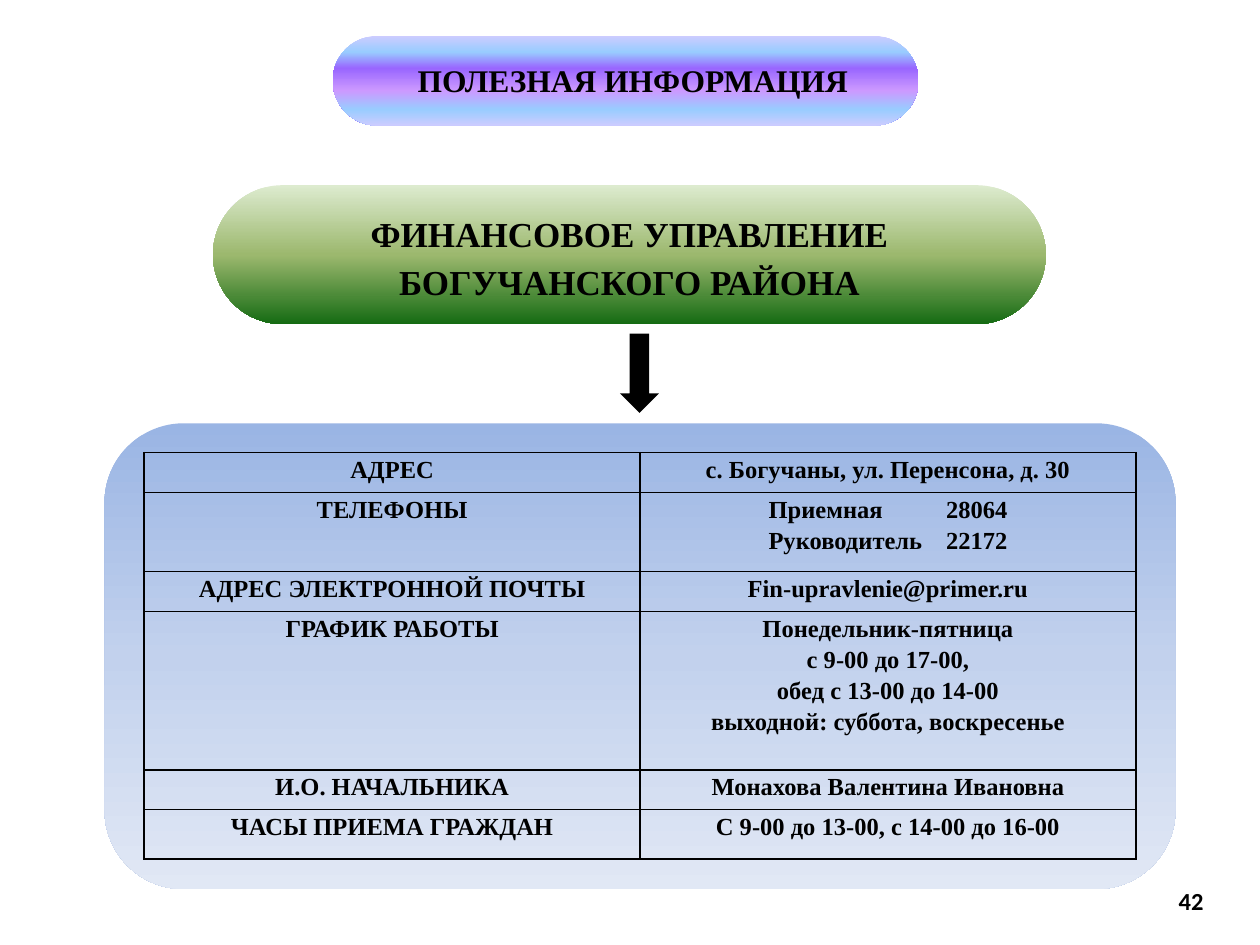
from dataclasses import dataclass

from lxml.etree import SubElement
from pptx import Presentation
from pptx.dml.color import RGBColor
from pptx.enum.shapes import MSO_SHAPE
from pptx.enum.text import MSO_ANCHOR, PP_ALIGN
from pptx.oxml import parse_xml
from pptx.oxml.ns import nsdecls, qn
from pptx.util import Inches, Pt

WIDTH, HEIGHT = 10, 7.5
BLACK = RGBColor(0x00, 0x00, 0x00)
LAVENDER = RGBColor(0xCC, 0xCC, 0xFF)
SKY = RGBColor(0x99, 0xCC, 0xFF)
VIOLET = RGBColor(0x99, 0x66, 0xFF)
LILAC = RGBColor(0xCC, 0x99, 0xFF)
PALE_GREEN = RGBColor(0xDD, 0xEB, 0xCF)
OLIVE = RGBColor(0x9C, 0xB8, 0x6E)
FOREST = RGBColor(0x15, 0x6B, 0x13)
BLUE = RGBColor(0x9A, 0xB5, 0xE4)
LIGHT_BLUE = RGBColor(0xC2, 0xD1, 0xED)
PALE_BLUE = RGBColor(0xE1, 0xE8, 0xF5)

HEADING_BANDS = [(0, LAVENDER), (18, SKY), (36, VIOLET), (61, LILAC), (82, SKY), (100, LAVENDER)]
OFFICE_BANDS = [(0, PALE_GREEN), (50, OLIVE), (100, FOREST)]
PANEL_BANDS = [(0, BLUE), (50, LIGHT_BLUE), (100, PALE_BLUE)]

CONTACTS = [
    ("АДРЕС", "с. Богучаны, ул. Перенсона, д. 30", 1),
    ("ТЕЛЕФОНЫ", "Приемная\t28064\nРуководитель\t22172", 2),
    ("АДРЕС ЭЛЕКТРОННОЙ ПОЧТЫ", "Fin-upravlenie@primer.ru", 1),
    ("ГРАФИК РАБОТЫ", "Понедельник-пятница\nс 9-00 до 17-00,\nобед с 13-00 до 14-00\n"
                      "выходной: суббота, воскресенье", 4),
    ("И.О. НАЧАЛЬНИКА", "Монахова Валентина Ивановна", 1),
    ("ЧАСЫ ПРИЕМА ГРАЖДАН", "С 9-00 до 13-00, с 14-00 до 16-00", 1.25),
]


@dataclass
class Box:
    """A region given in percent of the slide's width and height."""
    left: float
    top: float
    width: float
    height: float

    def emu(self):
        """Return left, top, width and height as lengths."""
        across, down = WIDTH / 100, HEIGHT / 100
        return (Inches(self.left * across), Inches(self.top * down),
                Inches(self.width * across), Inches(self.height * down))

    def inner(self, left, top, width, height):
        """Return the box that takes the given percentages of this one."""
        across, down = self.width / 100, self.height / 100
        return Box(self.left + left * across, self.top + top * down,
                   width * across, height * down)


def write(frame, text, size=14, font="Times New Roman", align=PP_ALIGN.CENTER,
          spacing=None, tab=None):
    """Fill a text frame with bold black paragraphs, one for each line."""
    for index, line in enumerate(text.split("\n")):
        paragraph = frame.add_paragraph() if index else frame.paragraphs[0]
        paragraph.alignment = align
        if spacing:
            paragraph.line_spacing = spacing
        if tab:
            stops = SubElement(paragraph._p.get_or_add_pPr(), qn("a:tabLst"))
            SubElement(stops, qn("a:tab"), pos=str(Inches(tab)), algn="l")
        run = paragraph.add_run()
        run.text = line
        run.font.size, run.font.name, run.font.bold = Pt(size), font, True
        run.font.color.rgb = BLACK


def add_label(slide, box, text, wrap=True, **style):
    """Place a text box."""
    frame = slide.shapes.add_textbox(*box.emu()).text_frame
    frame.word_wrap = wrap
    frame.vertical_anchor = MSO_ANCHOR.MIDDLE
    write(frame, text, **style)


def add_pill(slide, box, bands, rounding=0.5):
    """Place a rounded shape shaded from top to bottom."""
    pill = slide.shapes.add_shape(MSO_SHAPE.ROUNDED_RECTANGLE, *box.emu())
    pill.adjustments[0] = rounding
    pill.shadow.inherit = False
    pill.line.fill.background()
    pill.fill.gradient()
    pill.fill.gradient_angle = 270
    stops = pill._element.spPr.find(qn("a:gradFill")).find(qn("a:gsLst"))
    for stop in list(stops):
        stops.remove(stop)
    for share, color in bands:
        stop = SubElement(stops, qn("a:gs"), pos=str(share * 1000))
        SubElement(stop, qn("a:srgbClr"), val=str(color))
    return pill


def add_heading(slide, box):
    """Place the heading over its striped pill."""
    add_pill(slide, box, HEADING_BANDS)
    add_label(slide, box.inner(12, 21, 78.5, 57), "ПОЛЕЗНАЯ ИНФОРМАЦИЯ",
              wrap=False, size=18)


def add_office(slide, box):
    """Place the name of the office in its green pill."""
    frame = add_pill(slide, box, OFFICE_BANDS).text_frame
    frame.word_wrap = True
    frame.vertical_anchor = MSO_ANCHOR.MIDDLE
    write(frame, "ФИНАНСОВОЕ УПРАВЛЕНИЕ БОГУЧАНСКОГО РАЙОНА", size=20, spacing=1.15)


def add_arrow(slide, box):
    """Place the black arrow that leads to the contacts."""
    arrow = slide.shapes.add_shape(MSO_SHAPE.DOWN_ARROW, *box.emu())
    arrow.shadow.inherit = False
    arrow.fill.solid()
    arrow.fill.fore_color.rgb = BLACK
    arrow.line.fill.background()


def rule_cell(cell):
    """Clear a cell's fill and rule its four sides."""
    cell.fill.background()
    for index, side in enumerate(("lnL", "lnR", "lnT", "lnB")):
        cell._tc.tcPr.insert(index, parse_xml(
            f'<a:{side} {nsdecls("a")} w="{Pt(1)}"><a:solidFill>'
            f'<a:srgbClr val="{BLACK}"/></a:solidFill></a:{side}>'))


def add_contacts(slide, box):
    """Place the blue panel with the table of contacts."""
    add_pill(slide, box, PANEL_BANDS, rounding=0.17)
    area = box.inner(3.7, 6.3, 92.6, 87.3)
    table = slide.shapes.add_table(len(CONTACTS), 2, *area.emu()).table
    table.first_row = table.horz_banding = False
    unit = area.height / 100 * HEIGHT / sum(rows for _, _, rows in CONTACTS)
    for index, (label, value, rows) in enumerate(CONTACTS):
        table.rows[index].height = Inches(unit * rows)
        for cell, text in zip(table.rows[index].cells, (label, value)):
            tabbed = "\t" in text
            cell.margin_left = Inches(1.02 if tabbed else 0.07)
            cell.margin_right = Inches(0.07)
            cell.margin_top = cell.margin_bottom = 0
            rule_cell(cell)
            write(cell.text_frame, text, spacing=1.15, tab=1.41 if tabbed else None,
                  align=PP_ALIGN.LEFT if tabbed else PP_ALIGN.CENTER)


def main():
    """Build the slide and save it."""
    deck = Presentation()
    deck.slide_width, deck.slide_height = Inches(WIDTH), Inches(HEIGHT)
    slide = deck.slides.add_slide(deck.slide_layouts[6])
    add_label(slide, Box(71.7, 92.7, 24.8, 5.3), "42", font="Calibri",
              align=PP_ALIGN.RIGHT)
    add_heading(slide, Box(26.4, 3.8, 46.5, 9.5))
    add_office(slide, Box(16.9, 19.6, 66.1, 14.7))
    add_arrow(slide, Box(49.2, 35.3, 3.1, 8.4))
    add_contacts(slide, Box(8.3, 44.8, 85, 49.3))
    deck.save("out.pptx")


if __name__ == "__main__":
    main()
